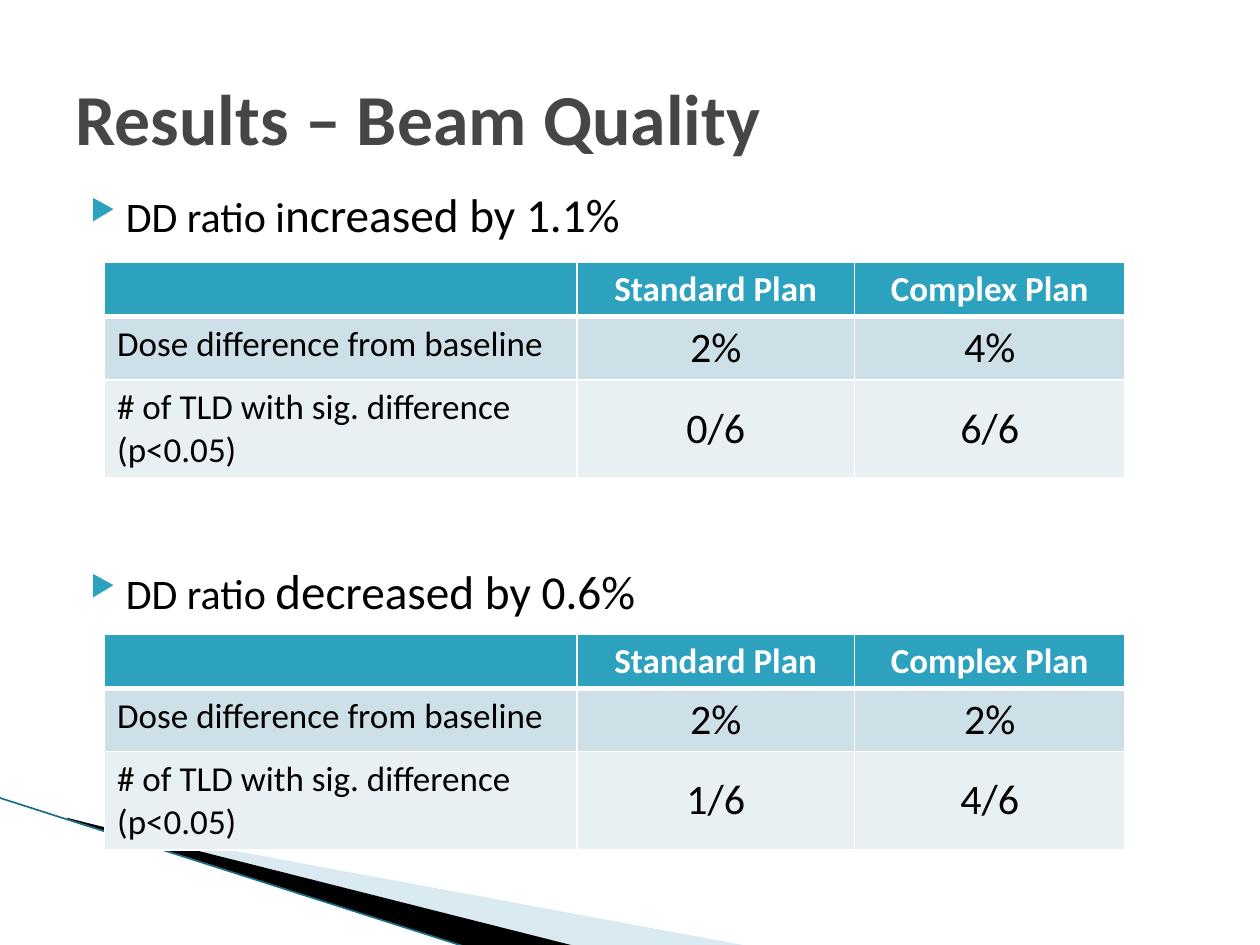
from dataclasses import dataclass

from lxml import etree
from pptx import Presentation
from pptx.dml.color import RGBColor
from pptx.enum.shapes import MSO_CONNECTOR
from pptx.enum.text import MSO_ANCHOR, PP_ALIGN
from pptx.oxml import parse_xml
from pptx.oxml.ns import nsdecls, qn
from pptx.util import Inches, Pt

STRAIGHT = MSO_CONNECTOR.STRAIGHT
TOP, MIDDLE = MSO_ANCHOR.TOP, MSO_ANCHOR.MIDDLE
LEFT, CENTER = PP_ALIGN.LEFT, PP_ALIGN.CENTER

FONT = "Calibri"
BLACK = RGBColor(0x00, 0x00, 0x00)
WHITE = RGBColor(0xFF, 0xFF, 0xFF)
TITLE_GRAY = RGBColor(0x46, 0x46, 0x46)
TEAL = RGBColor(0x2D, 0xA2, 0xBF)
DARK_TEAL = RGBColor(0x1B, 0x6F, 0x85)
PALE_BLUE = RGBColor(0xA0, 0xCB, 0xDC)
ROW_FILLS = (TEAL, RGBColor(0xCD, 0xE0, 0xE8), RGBColor(0xE8, 0xF0, 0xF4))

COLUMN_WIDTHS = (3.75, 2.2, 2.15)
ROW_HEIGHTS = (0.43, 0.49, 0.78)


@dataclass
class Wedge:
    points: tuple
    color: RGBColor
    opacity: int = 100


@dataclass
class Bullet:
    runs: tuple
    space_before: float


@dataclass
class ResultTable:
    top: float
    dose_differences: tuple
    significant_counts: tuple


WEDGES = (
    Wedge(((0.55, 6.51), (5.95, 7.51), (4.56, 7.51), (0.55, 6.5)), PALE_BLUE, 40),
    Wedge(((0.53, 6.49), (4.57, 7.51), (3.72, 7.52), (0.54, 6.5)), BLACK),
)
BULLETS = (
    Bullet((("DD ratio i", 24), ("ncreased by 1.1%", 27)), 0),
    Bullet((("DD ratio ", 24), ("de", 28), ("creased by 0.6%", 27)), 182),
)
TABLES = (
    ResultTable(2.08, ("2%", "4%"), ("0/6", "6/6")),
    ResultTable(5.03, ("2%", "2%"), ("1/6", "4/6")),
)


def style_font(font, size: float, color: RGBColor, bold: bool = False) -> None:
    font.name, font.size, font.bold = FONT, Pt(size), bold
    font.color.rgb = color


def draw_wedge(slide, wedge: Wedge) -> None:
    points = [(Inches(x), Inches(y)) for x, y in wedge.points]
    builder = slide.shapes.build_freeform(*points[0], scale=1.0)
    builder.add_line_segments(points[1:], close=True)
    shape = builder.convert_to_shape()
    shape.shadow.inherit = False
    shape.line.fill.background()
    shape.fill.solid()
    shape.fill.fore_color.rgb = wedge.color
    if wedge.opacity < 100:
        color = shape.fill._xPr.find(qn("a:solidFill"))[0]
        etree.SubElement(color, qn("a:alpha"), val=str(wedge.opacity * 1000))


def draw_edge(slide) -> None:
    edge = slide.shapes.add_connector(
        STRAIGHT, Inches(-0.01), Inches(6.33), Inches(3.71), Inches(7.52))
    edge.line.color.rgb = DARK_TEAL
    edge.line.width = Pt(0.95)
    etree.SubElement(edge._element.spPr, qn("a:effectLst"))


def add_text_frame(slide, left: float, top: float, width: float, height: float):
    box = slide.shapes.add_textbox(
        Inches(left), Inches(top), Inches(width), Inches(height))
    box.text_frame.word_wrap = True
    return box.text_frame


def draw_title(slide, text: str) -> None:
    frame = add_text_frame(slide, 0.5, 0.3, 9, 1.25)
    frame.vertical_anchor = MIDDLE
    paragraph = frame.paragraphs[0]
    paragraph.text = text
    style_font(paragraph.font, 41, TITLE_GRAY, True)


def draw_bullets(slide, bullets: tuple) -> None:
    frame = add_text_frame(slide, 0.5, 1.42, 9, 3.67)
    for index, bullet in enumerate(bullets):
        paragraph = frame.add_paragraph() if index else frame.paragraphs[0]
        properties = paragraph._p.get_or_add_pPr()
        properties.set("marL", str(Inches(0.4)))
        properties.set("indent", str(Inches(-0.28)))
        color = etree.SubElement(properties, qn("a:buClr"))
        etree.SubElement(color, qn("a:srgbClr"), val=str(TEAL))
        etree.SubElement(properties, qn("a:buSzPct"), val="68000")
        etree.SubElement(properties, qn("a:buChar"), char="▶")
        paragraph.space_before = Pt(bullet.space_before)
        for text, size in bullet.runs:
            run = paragraph.add_run()
            run.text = text
            style_font(run.font, size, BLACK)


def set_borders(cell, row: int) -> None:
    properties = cell._tc.get_or_add_tcPr()
    widths = {"L": 1, "R": 1, "T": 3 if row == 1 else 1, "B": 3 if row == 0 else 1}
    for side, width in widths.items():
        properties.append(parse_xml(
            f'<a:ln{side} {nsdecls("a")} w="{Pt(width)}"><a:solidFill>'
            f'<a:srgbClr val="{WHITE}"/></a:solidFill></a:ln{side}>'))


def draw_table(slide, result: ResultTable) -> None:
    rows = (
        ("", "Standard Plan", "Complex Plan"),
        ("Dose difference from baseline", *result.dose_differences),
        ("# of TLD with sig. difference (p<0.05)", *result.significant_counts),
    )
    table = slide.shapes.add_table(
        len(rows), len(COLUMN_WIDTHS), Inches(0.83), Inches(result.top),
        Inches(sum(COLUMN_WIDTHS)), Inches(sum(ROW_HEIGHTS))).table
    for column, width in zip(table.columns, COLUMN_WIDTHS):
        column.width = Inches(width)
    for row, (texts, height) in enumerate(zip(rows, ROW_HEIGHTS)):
        table.rows[row].height = Inches(height)
        header = row == 0
        for column, text in enumerate(texts):
            cell = table.cell(row, column)
            set_borders(cell, row)
            cell.fill.solid()
            cell.fill.fore_color.rgb = ROW_FILLS[row]
            value = not header and column > 0
            cell.vertical_anchor = MIDDLE if value else TOP
            paragraph = cell.text_frame.paragraphs[0]
            paragraph.text = text
            paragraph.alignment = CENTER if column else LEFT
            style_font(paragraph.font, 24 if value else 20,
                       WHITE if header else BLACK, header)


def main() -> None:
    """Build the beam quality results slide."""
    presentation = Presentation()
    presentation.slide_width, presentation.slide_height = Inches(10), Inches(7.5)
    slide = presentation.slides.add_slide(presentation.slide_layouts[6])
    for wedge in WEDGES:
        draw_wedge(slide, wedge)
    draw_edge(slide)
    draw_bullets(slide, BULLETS)
    draw_title(slide, "Results – Beam Quality")
    for result in TABLES:
        draw_table(slide, result)
    presentation.save("out.pptx")


if __name__ == "__main__":
    main()
